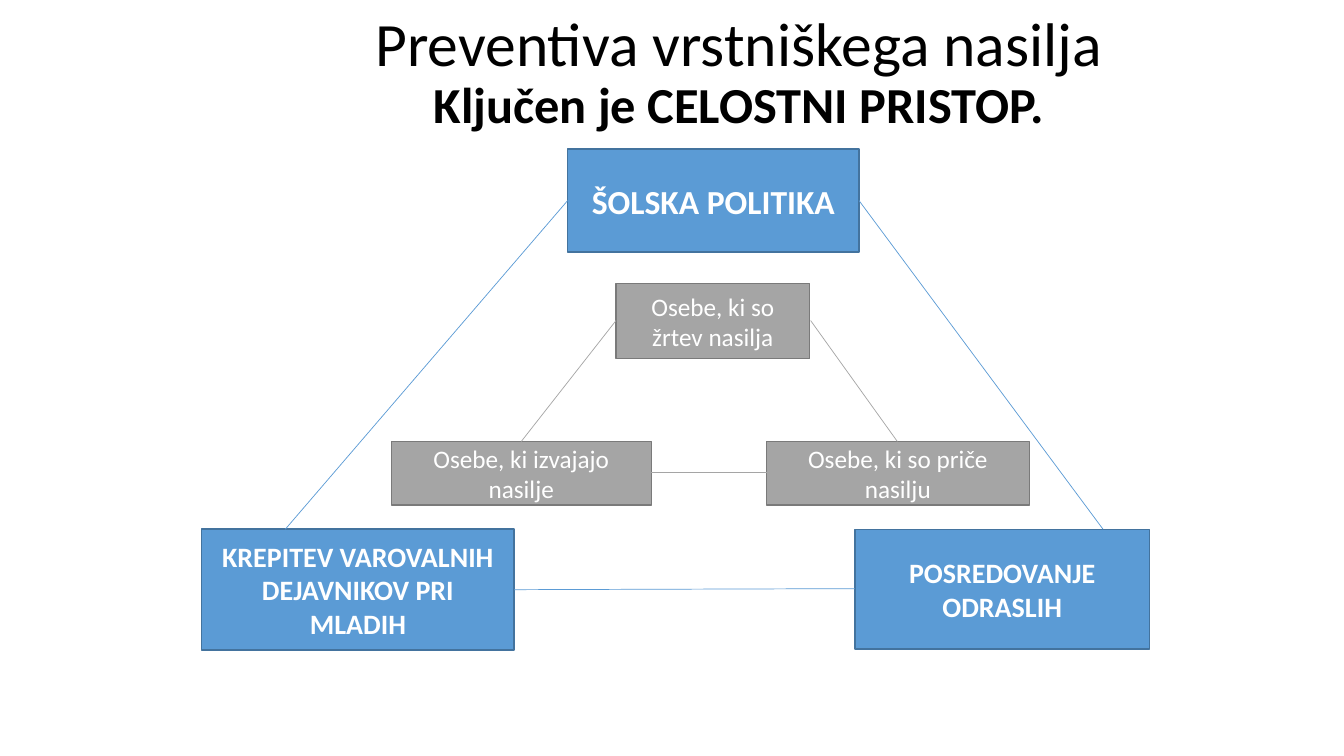
from pptx import Presentation
from pptx.dml.color import RGBColor
from pptx.enum.shapes import MSO_CONNECTOR, MSO_SHAPE
from pptx.enum.text import MSO_ANCHOR, MSO_AUTO_SIZE, PP_ALIGN
from pptx.oxml.ns import qn
from pptx.util import Inches, Pt
from lxml import etree

COLORS = {
    "text": "000000",
    "white": "FFFFFF",
    "blue": "5B9BD5",
    "blue_edge": "43739E",
    "gray": "A5A5A5",
    "gray_edge": "7A7A7A",
}
RECT, PROCESS = MSO_SHAPE.RECTANGLE, MSO_SHAPE.FLOWCHART_PROCESS


def rgb(name):
    return RGBColor.from_string(COLORS[name])


prs = Presentation()
prs.slide_width, prs.slide_height = Inches(13.33), Inches(7.5)
s = prs.slides.add_slide(prs.slide_layouts[5])

# Title
title = s.shapes.title
title.left, title.top = Inches(2.83), Inches(0.11)
title.width, title.height = Inches(9), Inches(1.25)
tf = title.text_frame
tf.word_wrap = True
tf.auto_size = MSO_AUTO_SIZE.NONE
tf.vertical_anchor = MSO_ANCHOR.MIDDLE
p = tf.paragraphs[0]
p.alignment = PP_ALIGN.CENTER
p.line_spacing = 0.9
p.font.name = "Calibri"
p.font.color.rgb = rgb("text")
r = p.add_run()
r.text = "Preventiva vrstniškega nasilja"
r.font.size = Pt(44)
p.add_line_break()
r = p.add_run()
r.text = "Ključen je CELOSTNI PRISTOP."
r.font.size = Pt(36)
r.font.bold = True

# Boxes: outer triangle in blue, inner triangle in gray
boxes = [
    ("ŠOLSKA POLITIKA", 5.63, 1.48, 2.89, 1.02, RECT, "blue", 24),
    ("KREPITEV VAROVALNIH DEJAVNIKOV PRI MLADIH", 2, 5.25, 3.1, 1.2, RECT, "blue", 20),
    ("POSREDOVANJE ODRASLIH", 8.48, 5.25, 2.92, 1.19, RECT, "blue", 20),
    ("Osebe, ki izvajajo nasilje", 3.88, 4.38, 2.58, 0.63, RECT, "gray", 18),
    ("Osebe, ki so priče nasilju", 7.6, 4.38, 2.61, 0.63, PROCESS, "gray", 18),
    ("Osebe, ki so žrtev nasilja", 6.11, 2.81, 1.92, 0.75, RECT, "gray", 18),
]
for text, left, top, width, height, kind, color, size in boxes:
    sp = s.shapes.add_shape(kind, Inches(left), Inches(top), Inches(width), Inches(height))
    sp.shadow.inherit = False
    sp.fill.solid()
    sp.fill.fore_color.rgb = rgb(color)
    sp.line.color.rgb = rgb(color + "_edge")
    sp.line.width = Pt(1)
    tf = sp.text_frame
    tf.word_wrap = True
    tf.vertical_anchor = MSO_ANCHOR.MIDDLE
    p = tf.paragraphs[0]
    p.text = text
    p.alignment = PP_ALIGN.CENTER
    p.font.name = "Calibri"
    p.font.size = Pt(size)
    p.font.bold = color == "blue"
    p.font.color.rgb = rgb("white")

# Triangle sides
sides = [
    (5.63, 1.99, 2.83, 5.25, "blue"),
    (5.1, 5.85, 8.48, 5.84, "blue"),
    (8.52, 1.99, 10.94, 5.25, "blue"),
    (6.11, 3.18, 5.17, 4.38, "gray"),
    (6.46, 4.69, 7.71, 4.69, "gray"),
    (8.04, 3.18, 8.9, 4.38, "gray"),
]
for x1, y1, x2, y2, color in sides:
    side = s.shapes.add_connector(
        MSO_CONNECTOR.STRAIGHT, Inches(x1), Inches(y1), Inches(x2), Inches(y2))
    side.line.color.rgb = rgb(color)
    side.line.width = Pt(0.5)
    etree.SubElement(side._element.spPr, qn("a:effectLst"))

prs.save("out.pptx")
